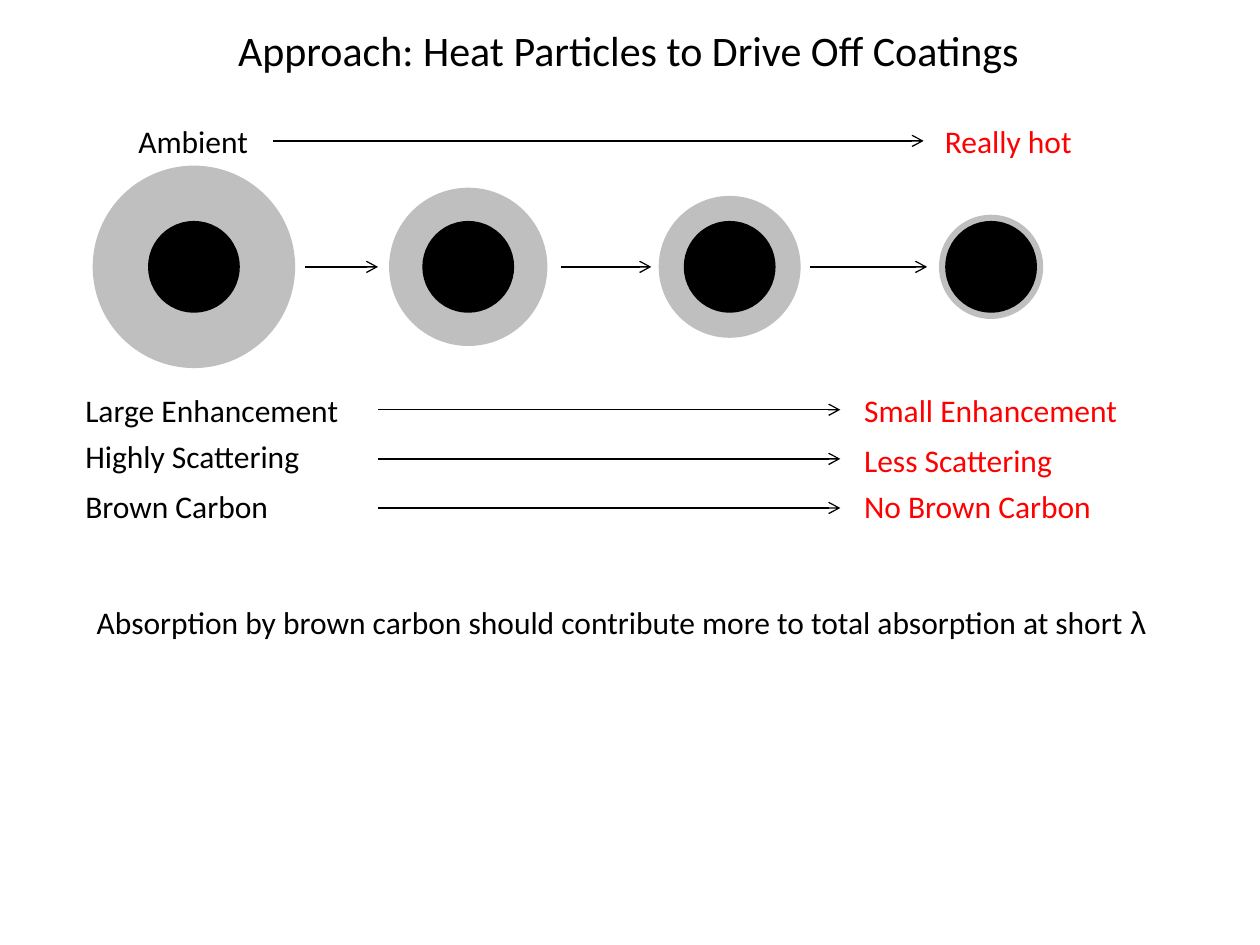
from lxml import etree
from pptx import Presentation
from pptx.dml.color import RGBColor
from pptx.enum.shapes import MSO_CONNECTOR, MSO_SHAPE
from pptx.enum.text import MSO_AUTO_SIZE
from pptx.oxml.ns import qn
from pptx.util import Cm, Pt

OVAL = MSO_SHAPE.OVAL
LINE = MSO_CONNECTOR.STRAIGHT
FIT = MSO_AUTO_SIZE.SHAPE_TO_FIT_TEXT

THEME = {
    "black": RGBColor(0, 0, 0),
    "red": RGBColor(255, 0, 0),
    "grey": RGBColor(191, 191, 191),
    "font": "Calibri",
    "greek": "Arial",
    "title": Pt(24),
    "body": Pt(18),
    "rim": Pt(2),
    "thin": Pt(0.75),
}

# Lengths are in centimetres.
TITLE = ("Approach: Heat Particles to Drive Off Coatings", 4.55, 0.36, 16.41)
# text, left, top, width, colour
LABELS = [
    ("Ambient", 2.54, 2.34, 2.74, "black"),
    ("Really hot", 18.8, 2.34, 3.1, "red"),
    ("Large Enhancement", 1.47, 7.75, 5.66, "black"),
    ("Small Enhancement", 17.17, 7.75, 5.66, "red"),
    ("Highly Scattering", 1.47, 8.69, 4.9, "black"),
    ("Less Scattering", 17.17, 8.76, 4.34, "red"),
    ("Brown Carbon", 1.47, 9.7, 4.24, "black"),
    ("No Brown Carbon", 17.17, 9.7, 5.13, "red"),
]
NOTE = ("Absorption by brown carbon should contribute more to total "
        "absorption at short ", 1.7, 12.04, 21.74)

MID = 5.38
CORE = 1.78
COATS = [(3.91, 4.01), (9.44, 3.12), (14.71, 2.79), (19.98, 2.03)]  # centre, size
STEPS = [(6.15, 7.62), (11.3, 13.13), (16.33, 18.69)]
HEAT = (5.51, 18.62, 2.84)
TREND = (7.62, 16.94)
ROW, PITCH = 8.26, 0.99

# left, right, height on the slide
ARROWS = [HEAT]
ARROWS += [(*TREND, ROW + i * PITCH) for i in range(3)]
ARROWS += [(*step, MID) for step in STEPS]


def add_disc(slide, x, size, hue):
    """Draw a circle centred at x on the row of particles."""
    disc = slide.shapes.add_shape(
        OVAL, Cm(x - size / 2), Cm(MID - size / 2), Cm(size), Cm(size))
    disc.shadow.inherit = False
    disc.fill.solid()
    disc.fill.fore_color.rgb = THEME[hue]
    disc.line.color.rgb = THEME[hue]
    disc.line.width = THEME["rim"]


def add_run(para, text, hue="black", size="body", font="font"):
    run = para.add_run()
    run.text = text
    form = {"name": THEME[font], "size": THEME[size]}
    for key, value in form.items():
        setattr(run.font, key, value)
    run.font.color.rgb = THEME[hue]


def add_text(slide, text, x, y, wide, hue="black", size="body"):
    high = 1.27 if size == "title" else 1.02
    box = slide.shapes.add_textbox(Cm(x), Cm(y), Cm(wide), Cm(high))
    frame = box.text_frame
    for key, value in {"word_wrap": False, "auto_size": FIT}.items():
        setattr(frame, key, value)
    para = frame.paragraphs[0]
    add_run(para, text, hue, size)
    return para


def add_arrow(slide, left, right, y):
    arrow = slide.shapes.add_connector(LINE, Cm(left), Cm(y), Cm(right), Cm(y))
    arrow.line.color.rgb = THEME["black"]
    arrow.line.width = THEME["thin"]
    etree.SubElement(arrow.line._get_or_add_ln(), qn("a:tailEnd"), type="arrow")
    etree.SubElement(arrow._element.spPr, qn("a:effectLst"))


def main():
    deck = Presentation()
    deck.slide_width, deck.slide_height = Cm(25.4), Cm(19.05)
    slide = deck.slides.add_slide(deck.slide_layouts[6])

    for x, size in COATS:
        add_disc(slide, x, size, "grey")
        add_disc(slide, x, CORE, "black")
    for label in LABELS:
        add_text(slide, *label)
    for arrow in ARROWS:
        add_arrow(slide, *arrow)
    add_run(add_text(slide, *NOTE), "λ", font="greek")
    add_text(slide, *TITLE, size="title")

    deck.save("out.pptx")


if __name__ == "__main__":
    main()
